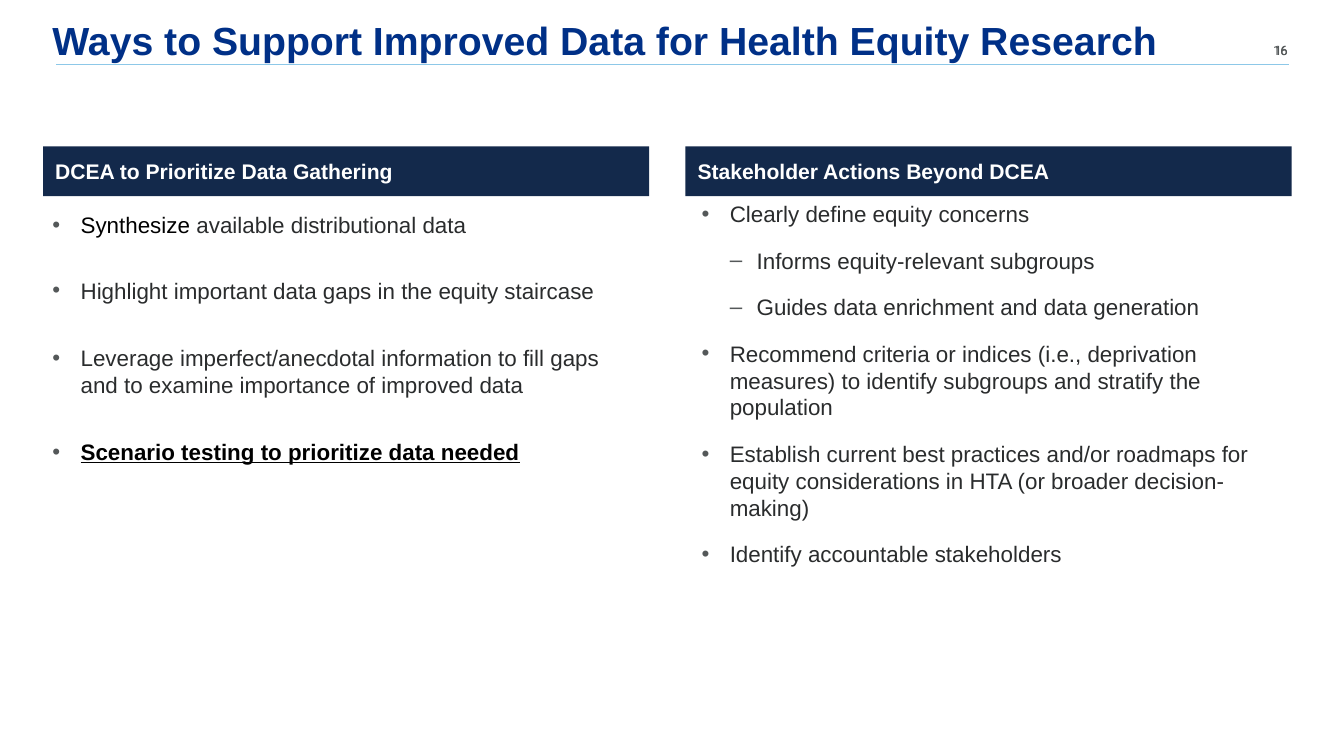
from lxml import etree
from pptx import Presentation
from pptx.dml.color import RGBColor
from pptx.enum import shapes, text
from pptx.oxml.ns import qn
from pptx.util import Inches, Pt

NAVY, BLUE, SKY = "13294B", "003087", "8DC8E8"
WHITE, BLACK, INK, GREY = "FFFFFF", "000000", "2A2C2D", "545859"
COLUMN_WIDTH = 4.51
BULLETS = [("•", 0.21, 0.21), ("‒", 0.41, 0.2)]  # character, margin, hanging


def rgb(value):
    return RGBColor.from_string(value)


def add_run(paragraph, wording, size, color, bold=False, face="Arial"):
    run = paragraph.add_run()
    run.text = wording
    run.font.name, run.font.size, run.font.bold = face, Pt(size), bold
    run.font.color.rgb = rgb(color)
    return run


prs = Presentation()
prs.slide_width = Inches(10)
prs.slide_height = prs.slide_width * 9 // 16
slide = prs.slides.add_slide(prs.slide_layouts[1])
title, actions_list = slide.placeholders

# Page number, set in two overlaid faces, and the rule under the title
for face in ("Roboto", "Cabin"):
    number = slide.shapes.add_textbox(Inches(9.27), Inches(0.27), Inches(0.41), Inches(0.18))
    number.text_frame.word_wrap = True
    number_line = number.text_frame.paragraphs[0]
    number_line.alignment = text.PP_ALIGN.RIGHT
    add_run(number_line, "16", 7, GREY, face=face)

rule = slide.shapes.add_connector(
    shapes.MSO_CONNECTOR.STRAIGHT, Inches(0.42), Inches(0.48), Inches(9.59), Inches(0.48))
rule.line.color.rgb = rgb(SKY)
rule.line.width = Pt(1)
etree.SubElement(rule._element.spPr, qn("a:effectLst"))

# Title
title.left, title.top, title.width, title.height = (
    Inches(0.32), Inches(0), Inches(9.3), Inches(0.63))
title_frame = title.text_frame
title_frame.auto_size = text.MSO_AUTO_SIZE.NONE
title_frame.vertical_anchor = text.MSO_ANCHOR.MIDDLE
title_frame.margin_left = title_frame.margin_right = Inches(0.07)
title_frame.margin_top = title_frame.margin_bottom = Inches(0.04)
heading = title_frame.paragraphs[0]
heading.alignment = text.PP_ALIGN.LEFT
heading.line_spacing = 0.9
add_run(heading, "Ways to Support Improved Data for Health Equity Research", 21, BLUE, bold=True)

# Column headers
for left, wording in [(0.32, "DCEA to Prioritize Data Gathering"),
                      (5.1, "Stakeholder Actions Beyond DCEA")]:
    header = slide.shapes.add_shape(
        shapes.MSO_SHAPE.RECTANGLE, Inches(left), Inches(1.09),
        Inches(COLUMN_WIDTH), Inches(0.37))
    header.shadow.inherit = False
    header.fill.solid()
    header.fill.fore_color.rgb = rgb(NAVY)
    header.line.fill.background()
    frame = header.text_frame
    frame.word_wrap = True
    frame.vertical_anchor = text.MSO_ANCHOR.MIDDLE
    frame.margin_left = frame.margin_right = Inches(0.09)
    frame.margin_top = frame.margin_bottom = Inches(0.03)
    frame.paragraphs[0].alignment = text.PP_ALIGN.LEFT
    add_run(frame.paragraphs[0], wording, 11.25, WHITE, bold=True)

# Points: each item is a level and its runs (wording, colour, emphasised)
data_gathering = [
    (1.54, 0.42, [("Synthesize ", BLACK, False), ("available distributional data", INK, False)]),
    (2.03, 0.42, [("Highlight important data gaps in the equity staircase", INK, False)]),
    (2.53, 0.62, [("Leverage imperfect/anecdotal information to fill gaps "
                   "and to examine importance of improved data", INK, False)]),
    (3.23, 0.42, [("Scenario testing to prioritize data needed", BLACK, True)]),
]
stakeholder_actions = [
    (0, "Clearly define equity concerns"),
    (1, "Informs equity-relevant subgroups"),
    (1, "Guides data enrichment and data generation"),
    (0, "Recommend criteria or indices (i.e., deprivation measures) "
        "to identify subgroups and stratify the population"),
    (0, "Establish current best practices and/or roadmaps for equity "
        "considerations in HTA (or broader decision-making)"),
    (0, "Identify accountable stakeholders"),
]

blocks = [(actions_list, 5.1, 1.46, 3,
           [(level, [(wording, INK, False)]) for level, wording in stakeholder_actions])]
for top, height, runs in data_gathering:
    point = slide.shapes.add_textbox(0, 0, 0, 0)
    blocks.append((point, 0.27, top, height, [(0, runs)]))

for body, left, top, height, items in blocks:
    body.left, body.top, body.width, body.height = (
        Inches(left), Inches(top), Inches(COLUMN_WIDTH), Inches(height))
    frame = body.text_frame
    frame.word_wrap = True
    frame.auto_size = text.MSO_AUTO_SIZE.NONE
    frame.vertical_anchor = text.MSO_ANCHOR.TOP
    frame.margin_left, frame.margin_right = Inches(0.12), Inches(0.06)
    frame.margin_top = frame.margin_bottom = Inches(0.03)
    for index, (level, runs) in enumerate(items):
        item = frame.add_paragraph() if index else frame.paragraphs[0]
        item.level = level
        character, margin, hanging = BULLETS[level]
        props = item._p.get_or_add_pPr()
        props.set("marL", str(Inches(margin)))
        props.set("indent", str(-Inches(hanging)))
        bullet_color = etree.SubElement(props, qn("a:buClr"))
        etree.SubElement(bullet_color, qn("a:srgbClr"), val=GREY)
        etree.SubElement(props, qn("a:buFont"), typeface="Arial")
        etree.SubElement(props, qn("a:buChar"), char=character)
        item.line_spacing = 1.0
        item.space_before = Pt(3 if index else 0)
        item.space_after = Pt(7.5)
        for wording, color, emphasised in runs:
            run = add_run(item, wording, 12, color, bold=emphasised)
            run.font.underline = emphasised

prs.save("out.pptx")
